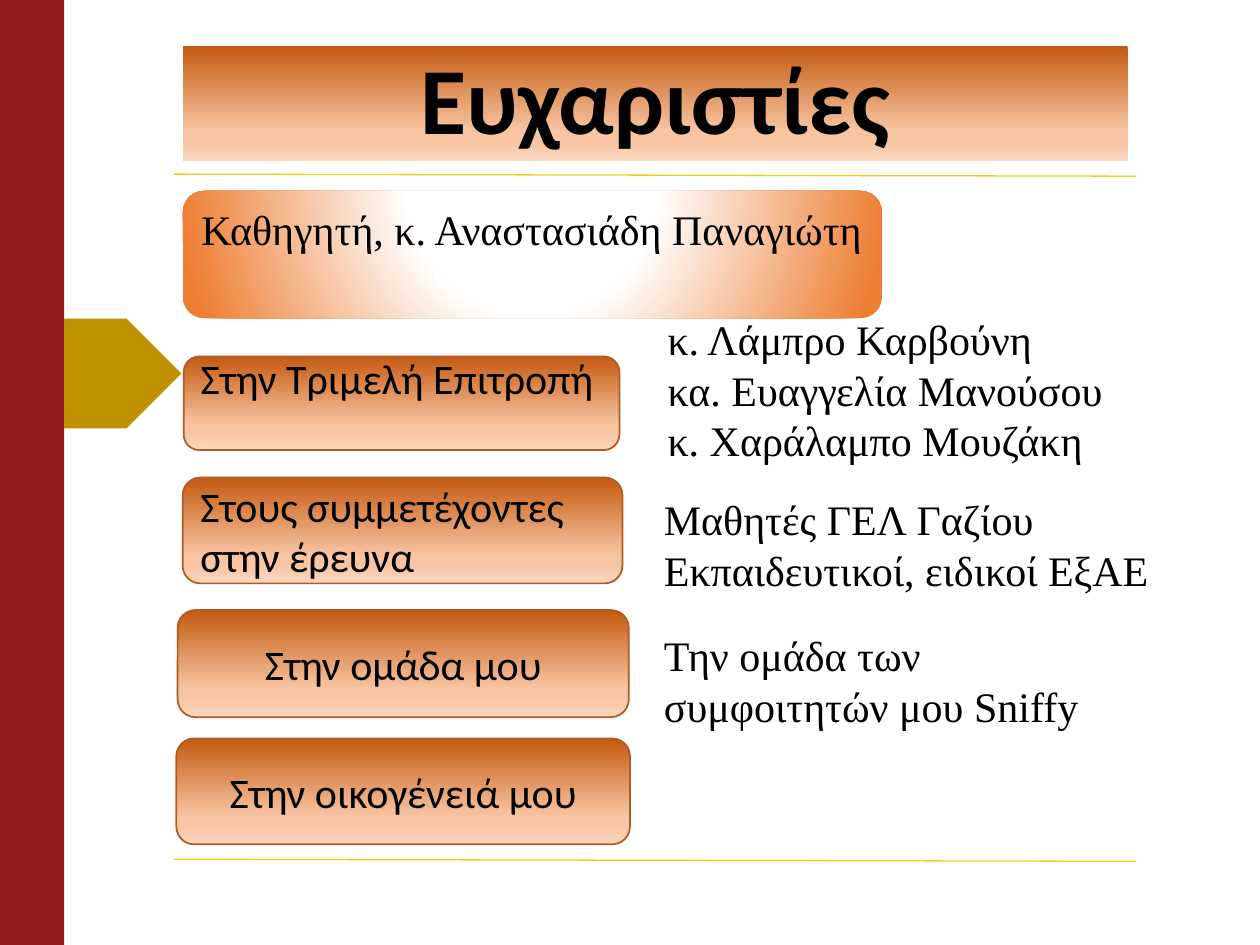
from lxml import etree
from pptx import Presentation
from pptx.dml.color import RGBColor
from pptx.enum.shapes import MSO_CONNECTOR, MSO_SHAPE
from pptx.enum.text import MSO_ANCHOR, MSO_AUTO_SIZE, PP_ALIGN
from pptx.oxml.ns import qn
from pptx.util import Pt

RECT, ROUND, PENTAGON = MSO_SHAPE.RECTANGLE, MSO_SHAPE.ROUNDED_RECTANGLE, MSO_SHAPE.PENTAGON
STRAIGHT = MSO_CONNECTOR.STRAIGHT
TOP, MIDDLE, BOTTOM = MSO_ANCHOR.TOP, MSO_ANCHOR.MIDDLE, MSO_ANCHOR.BOTTOM
LEFT, CENTER = PP_ALIGN.LEFT, PP_ALIGN.CENTER
FIXED = MSO_AUTO_SIZE.NONE
SANS, SERIF = "Calibri", "Times New Roman"
COPPER = [(0, "C55A11"), (74, "F7C5A2"), (83, "F7C5A2"), (100, "FAD8C1")]
GLOW = [(0, "FFFFFF"), (35, "FFFFFF"), (100, "ED7D31")]


def color(hex_code):
    return RGBColor.from_string(hex_code)


def points(box):
    return [Pt(length) for length in box]


def fill_gradient(shape, stops, focus=None):
    """Shade downwards, or in a circle around focus (left, top, right, bottom in percent)."""
    shape.fill.gradient()
    gradient = shape._element.spPr.find(qn("a:gradFill"))
    for child in list(gradient):
        gradient.remove(child)
    stop_list = etree.SubElement(gradient, qn("a:gsLst"))
    for percent, hex_code in stops:
        stop = etree.SubElement(stop_list, qn("a:gs"), pos=str(percent * 1000))
        etree.SubElement(stop, qn("a:srgbClr"), val=hex_code)
    if focus:
        circle = etree.SubElement(gradient, qn("a:path"), path="circle")
        sides = {side: str(percent * 1000) for side, percent in zip("ltrb", focus)}
        etree.SubElement(circle, qn("a:fillToRect"), **sides)
    else:
        etree.SubElement(gradient, qn("a:lin"), ang="5400000", scaled="0")


def write(shape, lines, font, size=24, align=LEFT, anchor=TOP, wrap=True):
    frame = shape.text_frame
    frame.auto_size = FIXED
    frame.word_wrap = wrap
    frame.vertical_anchor = anchor
    frame.text = "\n".join(lines)
    for paragraph in frame.paragraphs:
        paragraph.alignment = align
        paragraph.font.name = font
        paragraph.font.size = Pt(size)
        paragraph.font.color.rgb = color("000000")
    return frame


def add_panel(slide, kind, box):
    panel = slide.shapes.add_shape(kind, *points(box))
    panel.shadow.inherit = False
    panel.line.fill.background()
    return panel


def add_side_band(slide, box):
    """Red band with a gold pointer on its right edge."""
    left, top, width, height = box
    pointer = (left + width, top + 182.16, 67, 62.64)
    for kind, part, hex_code in ((RECT, box, "931B1B"), (PENTAGON, pointer, "BF9000")):
        panel = add_panel(slide, kind, part)
        panel.fill.solid()
        panel.fill.fore_color.rgb = color(hex_code)


def add_rule(slide, left, top, width):
    rule = slide.shapes.add_connector(STRAIGHT, *points((left, top, left + width, top + 1.2)))
    rule.line.color.rgb = color("FFC61A")
    rule.line.width = Pt(0.75)
    etree.SubElement(rule._element.spPr, qn("a:effectLst"))


def add_title(slide, box, text):
    title = slide.shapes.title
    title.left, title.top, title.width, title.height = points(box)
    fill_gradient(title, COPPER)
    heading = write(title, [text], SANS, 54, CENTER, BOTTOM).paragraphs[0]
    heading.font.bold = True
    heading.line_spacing = 0.9


def add_professor(slide, box, text):
    panel = add_panel(slide, ROUND, box)
    fill_gradient(panel, GLOW, (50, -80, 50, 180))
    write(panel, [text], SERIF, wrap=False)


def add_group(slide, box, text, align, anchor):
    panel = add_panel(slide, ROUND, box)
    fill_gradient(panel, COPPER)
    panel.line.color.rgb = color("AF5C24")
    panel.line.width = Pt(1)
    frame = write(panel, [text], SANS, align=align, anchor=anchor)
    if anchor == TOP:
        frame.margin_top = Pt(-5)


def add_names(slide, box, lines, wrap=True):
    write(slide.shapes.add_textbox(*points(box)), lines, SERIF, wrap=wrap)


def main():
    deck = Presentation()
    deck.slide_width, deck.slide_height = Pt(720), Pt(540)
    slide = deck.slides.add_slide(deck.slide_layouts[5])

    add_side_band(slide, (0, 0, 36.72, 540))
    add_title(slide, (104.4, 26.5, 540, 65.5), "Ευχαριστίες")
    for top in (99.5, 491):
        add_rule(slide, 99.36, top, 550)

    groups = [
        ((105, 203.7, 249, 53.5), "Στην Τριμελή Επιτροπή", LEFT, TOP),
        ((104.4, 272.9, 251.3, 60.5), "Στους συμμετέχοντες στην έρευνα", LEFT, MIDDLE),
        ((101.5, 348.6, 257.8, 61.2), "Στην ομάδα μου", CENTER, MIDDLE),
        ((100.8, 422, 259.2, 60.5), "Στην οικογένειά μου", CENTER, MIDDLE),
    ]
    for group in groups:
        add_group(slide, *group)

    add_professor(slide, (104.4, 109.1, 399.6, 72.7), "Καθηγητή, κ. Αναστασιάδη Παναγιώτη")
    add_names(slide, (374.4, 175.7, 272.2, 94.3),
              ["κ. Λάμπρο Καρβούνη", "κα. Ευαγγελία Μανούσου", "κ. Χαράλαμπο Μουζάκη"])
    add_names(slide, (372.3, 278.7, 294.5, 65.5),
              ["Μαθητές ΓΕΛ Γαζίου", "Εκπαιδευτικοί, ειδικοί ΕξΑΕ"], wrap=False)
    add_names(slide, (372.3, 356.4, 289.4, 65.5), ["Την ομάδα των συμφοιτητών μου Sniffy"])

    deck.save("out.pptx")


if __name__ == "__main__":
    main()
